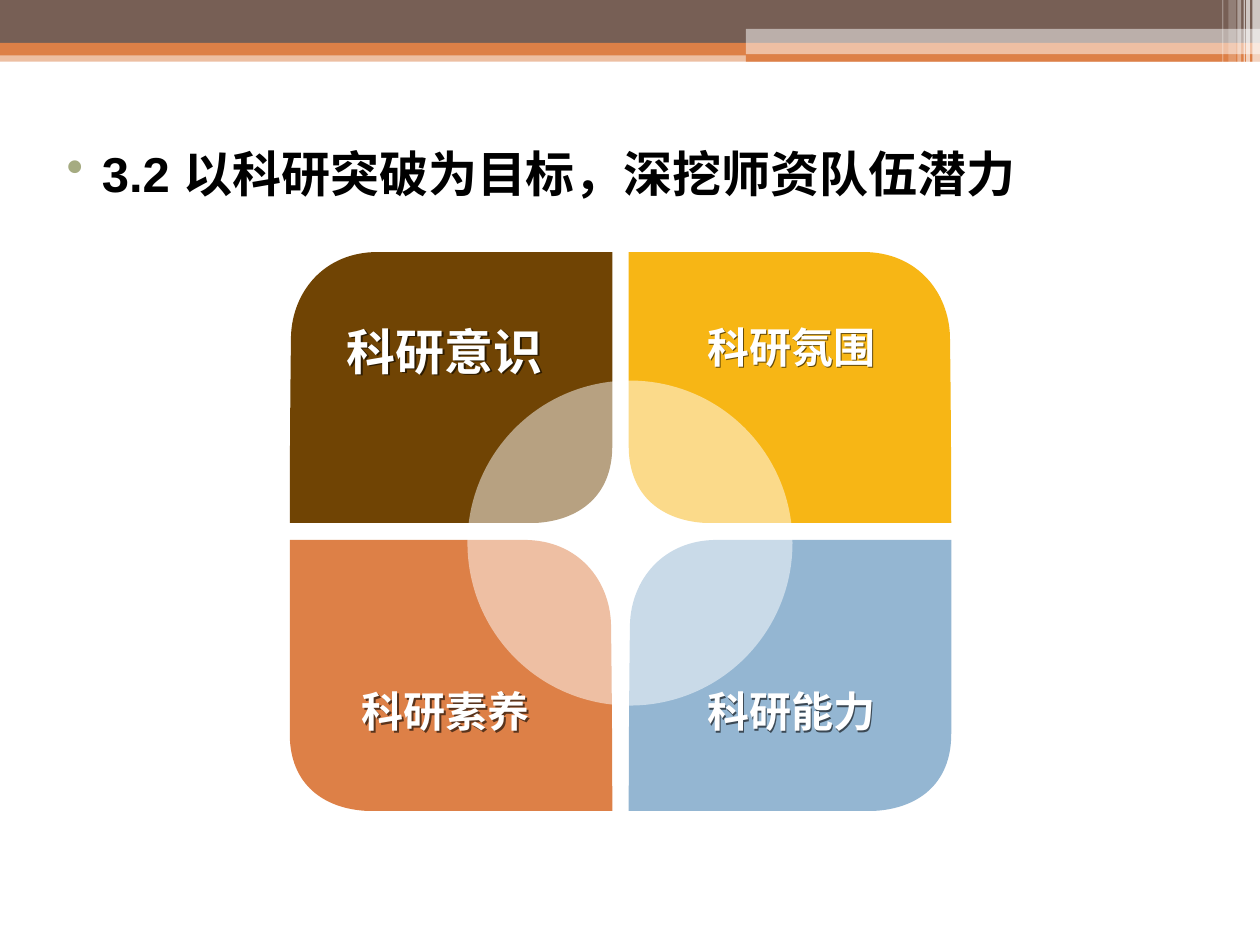
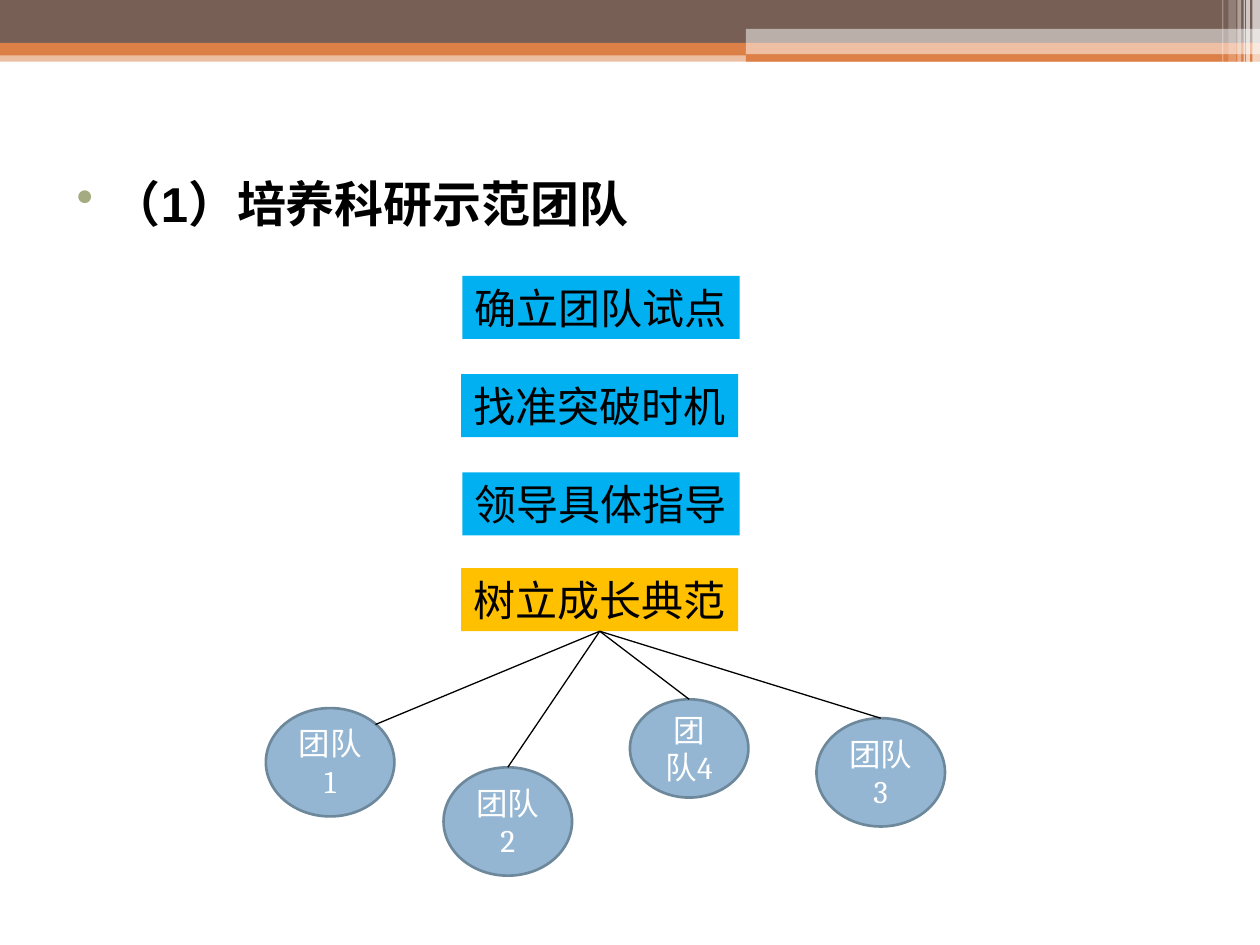
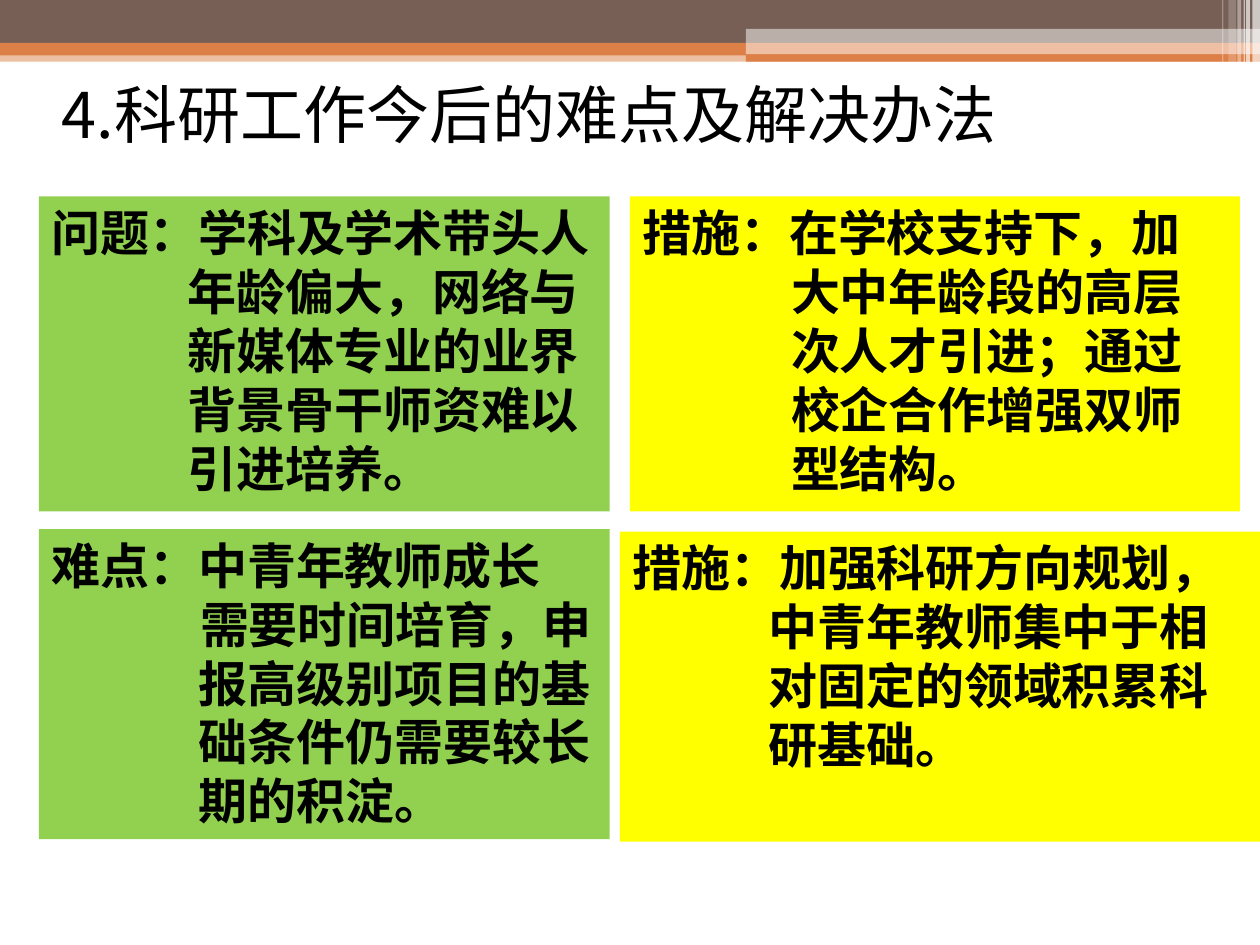
from dataclasses import dataclass

from lxml import etree
from pptx import Presentation
from pptx.dml.color import RGBColor
from pptx.enum.shapes import MSO_CONNECTOR, MSO_SHAPE
from pptx.enum.text import MSO_ANCHOR, PP_ALIGN
from pptx.oxml.ns import qn
from pptx.util import Inches, Pt

RECTANGLE, ROUNDED, OVAL = MSO_SHAPE.RECTANGLE, MSO_SHAPE.ROUNDED_RECTANGLE, MSO_SHAPE.OVAL
STRAIGHT = MSO_CONNECTOR.STRAIGHT
TOP, MIDDLE = MSO_ANCHOR.TOP, MSO_ANCHOR.MIDDLE
LEFT, CENTER = PP_ALIGN.LEFT, PP_ALIGN.CENTER
TOP_SITE, BOTTOM_SITE = 0, 2


@dataclass(frozen=True)
class Theme:
    white: str = "FFFFFF"
    black: str = "000000"
    umber: str = "775F55"
    orange: str = "DD8047"
    blue: str = "94B6D2"
    blue_edge: str = "6D879B"
    bullet: str = "A5AB81"
    brown: str = "704404"
    gold: str = "F7B615"
    sky: str = "00B0F0"
    amber: str = "FFC000"
    green: str = "92D050"
    yellow: str = "FFFF00"
    cjk: str = "Noto Sans CJK SC"
    sans: str = "Arial"
    serif: str = "Cambria"
    title_size: int = 36
    heading_size: int = 28
    body_size: int = 24
    small_size: int = 18


THEME = Theme()
WIDTH, HEIGHT = 10, 7.5

BANDS = [
    ((0, 0.4, WIDTH, 0.09), THEME.orange, 50, RECTANGLE),
    ((0, 0, WIDTH, 0.34), THEME.umber, 100, RECTANGLE),
    ((0, 0.34, WIDTH, 0.1), THEME.orange, 100, RECTANGLE),
    ((5.92, 0.39, 4.08, 0.1), THEME.orange, 100, RECTANGLE),
    ((5.92, 0.23, 4.08, 0.2), THEME.white, 50, RECTANGLE),
    ((5.91, 0.54, 3.35, 0.03), THEME.white, 100, ROUNDED),
    ((8.06, 0.64, 1.75, 0.04), THEME.white, 100, ROUNDED),
]
STRIPES = [
    (9.94, 0.06, 0.68, 65), (9.89, 0.03, 0.68, 65), (9.87, 0.01, 0.68, 60),
    (9.82, 0.03, 0.68, 40), (9.75, 0.06, 0.64, 20), (9.7, 0.01, 0.64, 30),
]

RESEARCH_HEADING = "3.2 以科研突破为目标，深挖师资队伍潜力"
PETALS = [
    (0, 0, THEME.brown), (0, 1, THEME.gold), (1, 0, THEME.orange), (1, 1, THEME.blue),
]
PETAL_LEFT, PETAL_TOP = 2.3, 2
PETAL_WIDTH, PETAL_HEIGHT = 2.56, 2.15
PETAL_PITCH_X, PETAL_PITCH_Y = 2.69, 2.285
PETAL_CURVES = [
    [(1.96, 2.15), (0.98, 2.15), (0, 2.15), (0, 2.15)],
    [(0, 2.15), (0, 2.15), (0, 1.41), (0.01, 0.67)],
    [(0.01, 0.67), (0.02, 0.32), (0.27, 0), (0.7, 0)],
    [(0.7, 0), (1.63, 0), (2.56, 0), (2.56, 0)],
    [(2.56, 0), (2.56, 0), (2.56, 0.77), (2.56, 1.54)],
    [(2.56, 1.54), (2.56, 1.95), (2.28, 2.13), (1.96, 2.15)],
]
HUB = (3.71, 3.02, 2.58, 2.58)
LABELS = [
    ("科研意识", (2.55, 2.5, 1.96, 0.57), THEME.heading_size),
    ("科研氛围", (5.3, 2.5, 1.96, 0.51), THEME.body_size),
    ("科研素养", (2.56, 5.39, 1.96, 0.51), THEME.body_size),
    ("科研能力", (5.3, 5.39, 1.96, 0.51), THEME.body_size),
]

TEAM_HEADING = "（1）培养科研示范团队"
STEPS = [
    ("确立团队试点", 3.67, 2.19, THEME.sky),
    ("找准突破时机", 3.66, 2.97, THEME.sky),
    ("领导具体指导", 3.67, 3.75, THEME.sky),
    ("树立成长典范", 3.66, 4.51, THEME.amber),
]
STEP_WIDTH, STEP_HEIGHT = 2.2, 0.5
TEAMS = [
    ("团队1", (2.11, 5.62, 1.02, 0.86), (2.98, 5.75)),
    ("团队4", (5, 5.55, 0.94, 0.78), None),
    ("团队3", (6.48, 5.7, 1.02, 0.86), None),
    ("团队2", (3.52, 6.09, 1.02, 0.86), None),
]

PLAN_TITLE = "4.科研工作今后的难点及解决办法"
PANELS = [
    ((0.31, 1.56, 4.53, 2.5), THEME.green, THEME.sans, 3,
     [("问题：学科及学术带头人年龄偏大，网络与新媒体专业的业界背景骨干师资难以引进培养。", 1.08, -1.08)]),
    ((5, 1.56, 4.84, 2.5), THEME.yellow, THEME.cjk, 3,
     [("措施：在学校支持下，加大中年龄段的高层次人才引进；通过校企合作增强双师型结构。", 1.18, -1.18)]),
    ((0.31, 4.2, 4.53, 2.46), THEME.green, THEME.cjk, 0,
     [("难点：中青年教师成长", 1.17, -1.17),
      ("需要时间培育，申报高级别项目的基础条件仍需要较长期的积淀。", 1.17, 0.01)]),
    ((4.92, 4.22, 5.08, 2.46), THEME.yellow, THEME.cjk, 0,
     [("措施：加强科研方向规划，", 1.17, -1.17),
      ("中青年教师集中于相对固定的领域积累科研基础。", 1.08, 0)]),
]


def inches(values):
    return [Inches(value) for value in values]


def paint(shape, color, opacity=100, edge=None):
    shape.shadow.inherit = False
    shape.fill.solid()
    shape.fill.fore_color.rgb = RGBColor.from_string(color)
    if opacity < 100:
        color_node = shape.fill._xPr.find(qn("a:solidFill"))[0]
        etree.SubElement(color_node, qn("a:alpha"), val=str(opacity * 1000))
    if edge:
        shape.line.color.rgb = RGBColor.from_string(edge)
        shape.line.width = Pt(1.5)
    else:
        shape.line.fill.background()


def add_block(slide, box, color, opacity=100, kind=RECTANGLE, edge=None):
    shape = slide.shapes.add_shape(kind, *inches(box))
    paint(shape, color, opacity, edge)
    return shape


def write(shape, text, size, font, color=THEME.black, bold=False,
          align=LEFT, anchor=TOP, wrap=True, before=0):
    frame = shape.text_frame
    frame.text = text
    frame.word_wrap = wrap
    frame.vertical_anchor = anchor
    for paragraph in frame.paragraphs:
        paragraph.alignment = align
        paragraph.space_before = Pt(before)
        for run in paragraph.runs:
            run.font.size = Pt(size)
            run.font.bold = bold
            run.font.name = font
            run.font.color.rgb = RGBColor.from_string(color)
            etree.SubElement(run._r.get_or_add_rPr(), qn("a:ea"), typeface=THEME.cjk)
    return frame


def indent(paragraph, margin, first_line):
    properties = paragraph._p.get_or_add_pPr()
    properties.set("marL", str(Inches(margin)))
    properties.set("indent", str(Inches(first_line)))
    return properties


def add_heading(slide, text, box):
    frame = write(slide.shapes.add_textbox(*inches(box)), text, THEME.heading_size,
                  THEME.sans, bold=True, before=3)
    properties = indent(frame.paragraphs[0], 0.4, -0.28)
    bullet_color = etree.SubElement(properties, qn("a:buClr"))
    etree.SubElement(bullet_color, qn("a:srgbClr"), val=THEME.bullet)
    etree.SubElement(properties, qn("a:buChar"), char="•")


def add_shadow(shape):
    effects = etree.SubElement(shape._element.spPr, qn("a:effectLst"))
    shadow = etree.SubElement(effects, qn("a:outerShdw"), dist="17961", dir="2700000")
    shadow_color = etree.SubElement(shadow, qn("a:srgbClr"), val=THEME.black)
    etree.SubElement(shadow_color, qn("a:alpha"), val="60000")


def add_petal(slide, row, column, color):
    mirrored = (row + column) % 2
    left = PETAL_LEFT + column * PETAL_PITCH_X
    top = PETAL_TOP + row * PETAL_PITCH_Y
    curves = [[inches((PETAL_WIDTH - x if mirrored else x, y)) for x, y in controls]
              for controls in PETAL_CURVES]
    origin = inches((left, top))
    corners = [(origin[0] + x, origin[1] + y) for x, y in (controls[0] for controls in curves)]
    builder = slide.shapes.build_freeform(*corners[0])
    builder.add_line_segments(corners[1:] + corners[:1], close=True)
    petal = builder.convert_to_shape()
    paint(petal, color)
    lines = list(petal._element.spPr.iter(qn("a:lnTo")))
    for line, controls in zip(lines, curves):
        bend = etree.Element(qn("a:cubicBezTo"))
        for x, y in controls[1:]:
            etree.SubElement(bend, qn("a:pt"), x=str(x), y=str(y))
        line.getparent().replace(line, bend)
    for line in lines[len(curves):]:
        line.getparent().remove(line)


def add_slide(presentation):
    slide = presentation.slides.add_slide(presentation.slide_layouts[6])
    for box, color, opacity, kind in BANDS:
        add_block(slide, box, color, opacity, kind)
    for left, width, height, opacity in STRIPES:
        add_block(slide, (left, 0, width, height), THEME.white, opacity)
    return slide


def build_research_slide(presentation):
    slide = add_slide(presentation)
    add_heading(slide, RESEARCH_HEADING, (0.31, 1.09, 9.38, 1.41))
    for row, column, color in PETALS:
        add_petal(slide, row, column, color)
    add_block(slide, HUB, THEME.white, 50, OVAL)
    for text, box, size in LABELS:
        label = slide.shapes.add_textbox(*inches(box))
        write(label, text, size, THEME.serif, THEME.white, bold=True, align=CENTER)
        add_shadow(label)


def build_team_slide(presentation):
    slide = add_slide(presentation)
    add_heading(slide, TEAM_HEADING, (0.39, 1.33, 9.38, 0.94))
    for text, left, top, color in STEPS:
        step = add_block(slide, (left, top, STEP_WIDTH, STEP_HEIGHT), color)
        write(step, text, THEME.body_size, THEME.cjk, wrap=False)
    for text, box, joint in TEAMS:
        team = add_block(slide, box, THEME.blue, kind=OVAL, edge=THEME.blue_edge)
        write(team, text, THEME.small_size, THEME.serif, THEME.white,
              align=CENTER, anchor=MIDDLE)
        end = joint or (box[0] + box[2] / 2, box[1])
        link = slide.shapes.add_connector(STRAIGHT, 0, 0, *inches(end))
        link.begin_connect(step, BOTTOM_SITE)
        if joint is None:
            link.end_connect(team, TOP_SITE)
        link.line.color.rgb = RGBColor.from_string(THEME.black)
        link.line.width = Pt(0.75)
        etree.SubElement(link._element.spPr, qn("a:effectLst"))


def build_plan_slide(presentation):
    slide = add_slide(presentation)
    title = slide.shapes.add_textbox(*inches((0.39, 0.55, 9.38, 0.7)))
    write(title, PLAN_TITLE, THEME.title_size, THEME.cjk, anchor=MIDDLE)
    for box, color, font, before, lines in PANELS:
        panel = add_block(slide, box, color)
        text = "\n".join(line for line, _, _ in lines)
        frame = write(panel, text, THEME.heading_size, font, bold=True, before=before)
        for paragraph, (_, margin, first_line) in zip(frame.paragraphs, lines):
            indent(paragraph, margin, first_line)


def main():
    """Build the three research planning slides."""
    presentation = Presentation()
    presentation.slide_width, presentation.slide_height = inches((WIDTH, HEIGHT))
    build_research_slide(presentation)
    build_team_slide(presentation)
    build_plan_slide(presentation)
    presentation.save("out.pptx")


if __name__ == "__main__":
    main()
